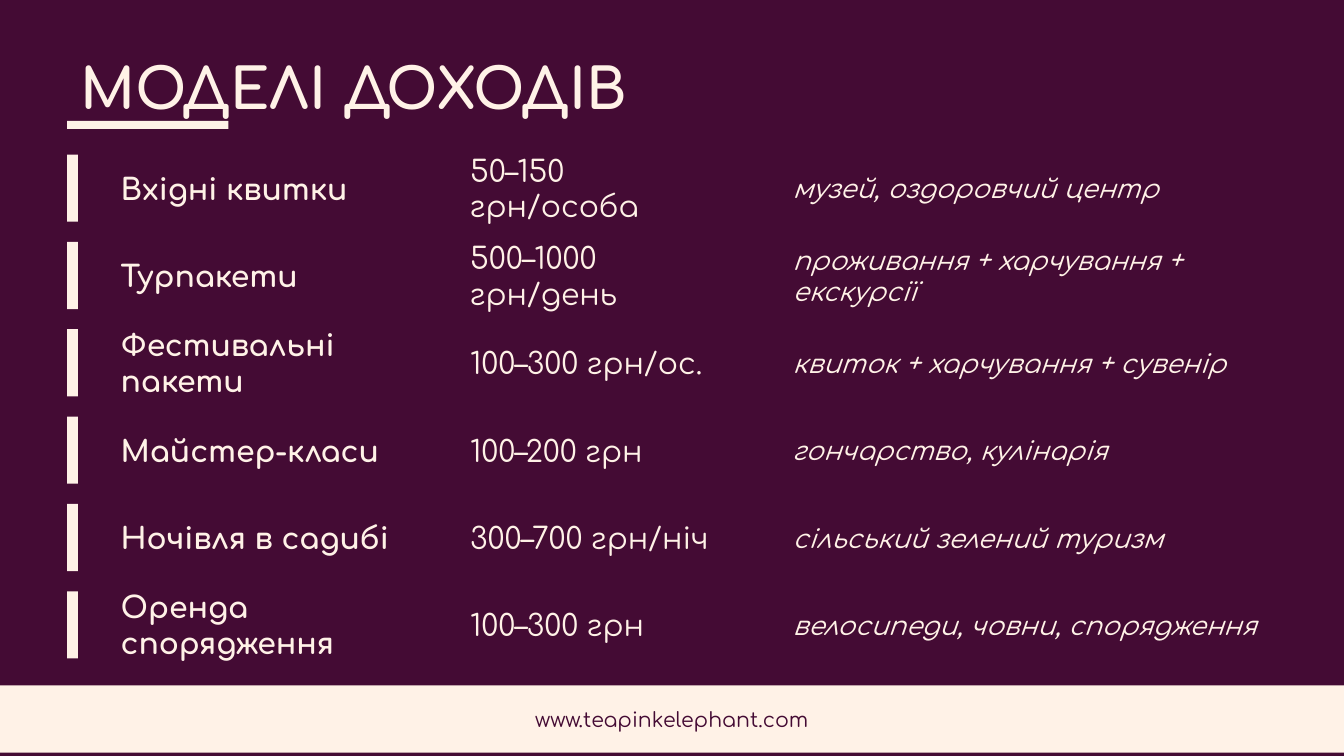
from pptx import Presentation
from pptx.dml.color import RGBColor
from pptx.enum.shapes import MSO_SHAPE
from pptx.enum.text import MSO_ANCHOR, MSO_AUTO_SIZE, PP_ALIGN
from pptx.util import Inches, Pt

theme = {
    "font": "Comfortaa",
    "plum": RGBColor.from_string("440B34"),
    "cream": RGBColor.from_string("FFF2E7"),
    "title": Pt(30),
    "main": Pt(16),
    "note": Pt(14),
    "foot": Pt(11),
}


def write(shape, text, size, color="cream", align=PP_ALIGN.LEFT, **style):
    frame = shape.text_frame
    frame.text = text
    frame.word_wrap = True
    frame.auto_size = MSO_AUTO_SIZE.NONE
    frame.vertical_anchor = MSO_ANCHOR.MIDDLE
    line = frame.paragraphs[0]
    line.alignment = align
    font = line.runs[0].font
    font.color.rgb = theme[color]
    for name, value in {"name": theme["font"], "size": theme[size], **style}.items():
        setattr(font, name, value)


def add_bar(left, top, width, height):
    bar = slide.shapes.add_shape(
        MSO_SHAPE.RECTANGLE, Inches(left), Inches(top), Inches(width), Inches(height)
    )
    bar.shadow.inherit = False
    bar.fill.solid()
    bar.fill.fore_color.rgb = theme["cream"]
    bar.line.fill.background()
    return bar


deck = Presentation()
deck.slide_width, deck.slide_height = Inches(10), Inches(10 * 9 / 16)
slide = deck.slides.add_slide(deck.slide_layouts[5])
slide.background.fill.solid()
slide.background.fill.fore_color.rgb = theme["plum"]

title = slide.shapes.title
place = {"left": 0.5, "top": 0.3, "width": 9, "height": 0.7}
for name, value in place.items():
    setattr(title, name, Inches(value))
write(title, "МОДЕЛІ ДОХОДІВ", "title", bold=True)
add_bar(0.5, 0.9, 1.2, 0.06)

cols = [
    (0.8, 2.5, "main", {"bold": True}),
    (3.4, 2.2, "main", {}),
    (5.8, 3.7, "note", {"italic": True}),
]
rows = [
    ("Вхідні квитки", "50–150 грн/особа", "музей, оздоровчий центр"),
    ("Турпакети", "500–1000 грн/день", "проживання + харчування + екскурсії"),
    ("Фестивальні пакети", "100–300 грн/ос.", "квиток + харчування + сувенір"),
    ("Майстер-класи", "100–200 грн", "гончарство, кулінарія"),
    ("Ночівля в садибі", "300–700 грн/ніч", "сільський зелений туризм"),
    ("Оренда спорядження", "100–300 грн", "велосипеди, човни, спорядження"),
]
for i, row in enumerate(rows):
    top = 1.15 + 0.65 * i
    add_bar(0.5, top, 0.08, 0.5)
    for text, (left, width, size, style) in zip(row, cols):
        box = slide.shapes.add_textbox(
            Inches(left), Inches(top), Inches(width), Inches(0.5)
        )
        write(box, text, size, **style)

foot = add_bar(0, 5.1, 10, 0.5)
write(foot, "www.teapinkelephant.com", "foot", "plum", PP_ALIGN.CENTER)

deck.save("out.pptx")
